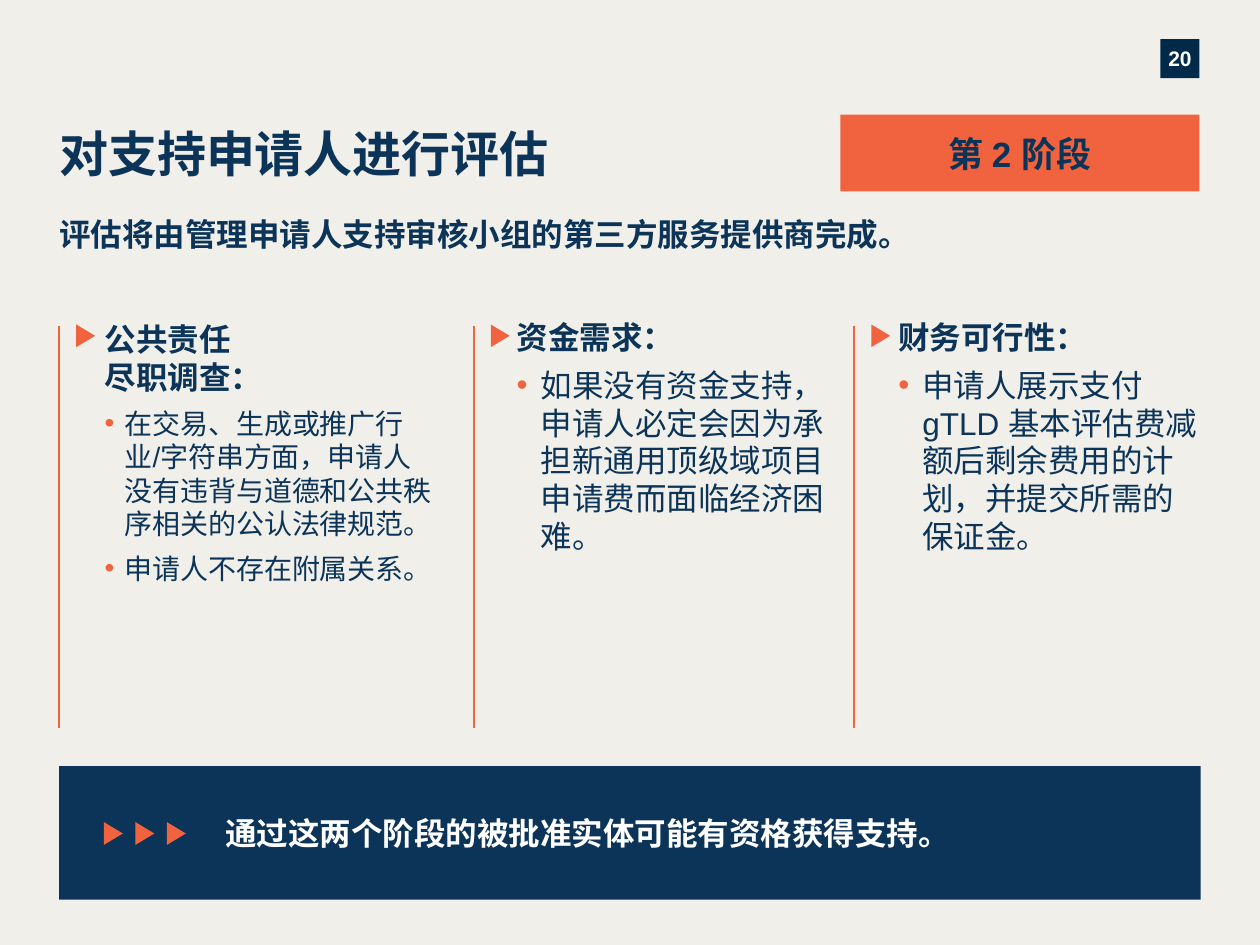
from dataclasses import dataclass

from lxml.etree import SubElement
from pptx import Presentation
from pptx.dml.color import RGBColor
from pptx.enum.shapes import MSO_CONNECTOR, MSO_SHAPE
from pptx.enum.text import MSO_ANCHOR, MSO_AUTO_SIZE, PP_ALIGN
from pptx.oxml.ns import qn
from pptx.util import Inches, Pt


@dataclass(frozen=True)
class Theme:
    font: str = "Arial"
    background: RGBColor = RGBColor(0xF1, 0xEF, 0xEA)
    navy: RGBColor = RGBColor(0x0B, 0x34, 0x58)
    dark: RGBColor = RGBColor(0x00, 0x2A, 0x49)
    orange: RGBColor = RGBColor(0xF1, 0x63, 0x3E)
    white: RGBColor = RGBColor(0xFF, 0xFF, 0xFF)
    title: int = 28
    stage: int = 20
    body: int = 18
    small: int = 16
    number: int = 12


theme = Theme()


def write_text(shape, box, paragraphs, color, align=PP_ALIGN.LEFT, anchor=MSO_ANCHOR.TOP, inset=0):
    shape.left, shape.top, shape.width, shape.height = [Inches(value) for value in box]
    frame = shape.text_frame
    frame.word_wrap = True
    frame.auto_size = MSO_AUTO_SIZE.NONE
    frame.vertical_anchor = anchor
    frame.margin_left = frame.margin_right = frame.margin_top = frame.margin_bottom = Inches(inset)
    frame.text = "\n".join(text for text, size, indent in paragraphs)
    for paragraph, (text, size, indent) in zip(frame.paragraphs, paragraphs):
        properties = paragraph._p.get_or_add_pPr()
        properties.set("marL", str(Inches(indent)))
        properties.set("indent", str(-Inches(indent)))
        if indent:
            bullet_color = SubElement(properties, qn("a:buClr"))
            SubElement(bullet_color, qn("a:srgbClr"), val=str(theme.orange))
            SubElement(properties, qn("a:buFont"), typeface=theme.font)
            SubElement(properties, qn("a:buChar"), char="•")
        else:
            SubElement(properties, qn("a:buNone"))
        paragraph.alignment = align
        paragraph.space_before = Pt(6 if indent else 0)
        paragraph.space_after = Pt(0)
        for run in paragraph.runs:
            run.font.name = theme.font
            run.font.size = Pt(size)
            run.font.bold = not indent
            run.font.color.rgb = color


def add_filled(kind, box, color):
    shape = slide.shapes.add_shape(kind, *[Inches(value) for value in box])
    shape.shadow.inherit = False
    shape.fill.solid()
    shape.fill.fore_color.rgb = color
    shape.line.fill.background()
    return shape


presentation = Presentation()
presentation.slide_width = Inches(10)
presentation.slide_height = Inches(7.5)
slide = presentation.slides.add_slide(presentation.slide_layouts.get_by_name("Comparison"))
slide.background.fill.solid()
slide.background.fill.fore_color.rgb = theme.background
title, subtitle, *lists = slide.placeholders

number_box = (9.21, 0.31, 0.31, 0.31)
number = add_filled(MSO_SHAPE.RECTANGLE, number_box, theme.dark)
write_text(number, number_box, [("20", theme.number, 0)], theme.white, PP_ALIGN.CENTER, MSO_ANCHOR.MIDDLE)

write_text(title, (0.47, 0.98, 5.88, 0.5), [("对支持申请人进行评估", theme.title, 0)], theme.navy)

stage_box = (6.67, 0.91, 2.85, 0.61)
stage = add_filled(MSO_SHAPE.RECTANGLE, stage_box, theme.orange)
write_text(stage, stage_box, [("第 2 阶段", theme.stage, 0)], theme.navy, PP_ALIGN.CENTER, MSO_ANCHOR.MIDDLE)

write_text(
    subtitle,
    (0.47, 1.71, 9.06, 0.63),
    [("评估将由管理申请人支持审核小组的第三方服务提供商完成。", theme.body, 0)],
    theme.navy,
)

columns = [
    (0.47, (0.83, 2.54, 2.64, 3.24), [
        ("公共责任\v尽职调查：", theme.body, 0),
        ("在交易、生成或推广行业/字符串方面，申请人没有违背与道德和公共秩序相关的公认法律规范。", theme.small, 0.16),
        ("申请人不存在附属关系。", theme.small, 0.16),
    ]),
    (3.76, (4.1, 2.52, 2.51, 2.53), [
        ("资金需求：", theme.body, 0),
        ("如果没有资金支持，申请人必定会因为承担新通用顶级域项目申请费而面临经济困难。", theme.body, 0.19),
    ]),
    (6.78, (7.13, 2.52, 2.4, 3.03), [
        ("财务可行性：", theme.body, 0),
        ("申请人展示支付 gTLD 基本评估费减额后剩余费用的计划，并提交所需的保证金。", theme.body, 0.19),
    ]),
]
for placeholder, (rule_left, box, paragraphs) in zip(lists, columns):
    write_text(placeholder, box, paragraphs, theme.navy)
    rule = slide.shapes.add_connector(
        MSO_CONNECTOR.STRAIGHT, Inches(rule_left), Inches(2.59), Inches(rule_left), Inches(5.78)
    )
    rule.line.color.rgb = theme.orange
    rule.line.width = Pt(1.25)
    SubElement(rule._element.spPr, qn("a:effectLst"))

add_filled(MSO_SHAPE.RECTANGLE, (0.47, 6.08, 9.06, 1.06), theme.navy)

column_arrows = [(rule_left + 0.12, 2.59) for rule_left, box, paragraphs in columns]
banner_arrows = [(0.81 + 0.25 * step, 6.54) for step in range(3)]
for left, top in column_arrows + banner_arrows:
    arrow = add_filled(MSO_SHAPE.ISOSCELES_TRIANGLE, (left, top, 0.18, 0.15), theme.orange)
    arrow.rotation = 90

conclusion_box = (1.69, 6.36, 7.56, 0.38)
conclusion = slide.shapes.add_textbox(*[Inches(value) for value in conclusion_box])
write_text(
    conclusion,
    conclusion_box,
    [("通过这两个阶段的被批准实体可能有资格获得支持。", theme.body, 0)],
    theme.white,
    inset=0.1,
)

presentation.save("out.pptx")
